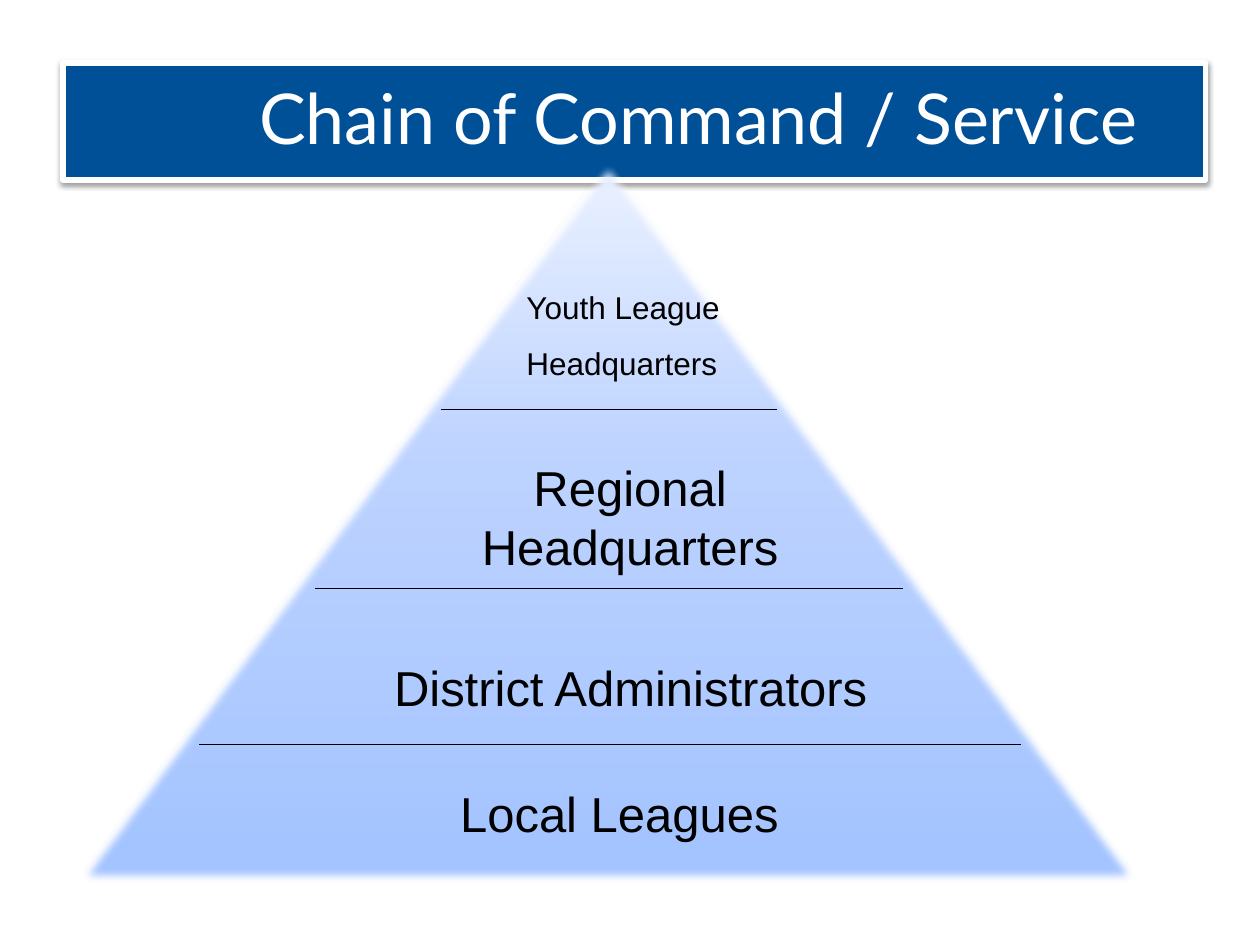
import dataclasses
import typing

import lxml.etree
import pptx
import pptx.dml.color
import pptx.enum.shapes
import pptx.enum.text
import pptx.oxml.ns
import pptx.util

Inches = pptx.util.Inches
Pt = pptx.util.Pt
RGB = pptx.dml.color.RGBColor.from_string
Shape = pptx.enum.shapes.MSO_SHAPE
Align = pptx.enum.text.PP_ALIGN
Anchor = pptx.enum.text.MSO_ANCHOR
qn = pptx.oxml.ns.qn


@dataclasses.dataclass(frozen=True)
class Theme:
    navy: str = "005097"
    white: str = "FFFFFF"
    black: str = "000000"
    fade: tuple = ((5, "A4C4FF"), (61, "BFD4FF"), (94, "E6EEFF"))
    head: str = "Lato"
    body: str = "Arial"
    title: int = 40
    large: int = 28
    small: int = 18
    gap: int = 10
    rule: float = 0.75


@dataclasses.dataclass(frozen=True)
class Label:
    box: tuple
    lines: tuple
    size: int
    font: str
    color: str
    align: typing.Any = Align.CENTER
    anchor: typing.Any = Anchor.TOP


class Rule(typing.NamedTuple):
    left: float
    right: float
    y: float


THEME = Theme()

RULES = (Rule(1.58, 8.1, 5.91), Rule(2.5, 7.17, 4.67), Rule(3.5, 6.17, 3.25))


def tier(box: tuple, text: str) -> Label:
    return Label(box, (text,), THEME.large, THEME.body, THEME.black)


TITLE = Label((1.58, 0.3, 7.92, 1.25), ("Chain of Command / Service",),
              THEME.title, THEME.head, THEME.white, anchor=Anchor.MIDDLE)
TIERS = (
    tier((2.08, 6.17, 5.67, 0.57), "Local Leagues"),
    tier((2.17, 5.17, 5.67, 0.57), "District Administrators"),
    tier((3.29, 3.58, 3.42, 1.03), "Regional Headquarters"),
    Label((4.08, 2.24, 2, 0.85), ("Youth League", "Headquarters"),
          THEME.small, THEME.body, THEME.black, Align.LEFT),
)


def node(root: typing.Any, tag: str, **attrs: typing.Any) -> typing.Any:
    return lxml.etree.SubElement(
        root, qn(tag), {key: str(val) for key, val in attrs.items()})


def add_shape(slide: typing.Any, kind: typing.Any, box: tuple,
              line: str, width: float) -> typing.Any:
    shape = slide.shapes.add_shape(kind, *map(Inches, box))
    shape.shadow.inherit = False
    shape.line.color.rgb = RGB(line)
    shape.line.width = Pt(width)
    return shape


def add_banner(slide: typing.Any) -> None:
    shape = add_shape(slide, Shape.RECTANGLE, (0.5, 0.5, 9.07, 0.93),
                      THEME.white, 3)
    shape.fill.solid()
    shape.fill.fore_color.rgb = RGB(THEME.navy)
    # Soft shadow straight below
    effect = shape.element.spPr.find(qn("a:effectLst"))
    shadow = node(effect, "a:outerShdw", blurRad=Pt(3.1), dist=Pt(1.6),
                  dir=90 * 60000, rotWithShape=0)
    color = node(shadow, "a:srgbClr", val=THEME.black)
    node(color, "a:alpha", val=38000)


def add_cone(slide: typing.Any) -> None:
    shape = add_shape(slide, Shape.FLOWCHART_EXTRACT, (0.58, 1.25, 8.5, 5.75),
                      THEME.black, THEME.rule)
    # Fade from the base up to the tip
    shape.fill.gradient()
    grad = shape.element.spPr.find(qn("a:gradFill"))
    stops = grad.find(qn("a:gsLst"))
    for stop in list(stops):
        stops.remove(stop)
    for place, color in THEME.fade:
        stop = node(stops, "a:gs", pos=place * 1000)
        node(stop, "a:srgbClr", val=color)
    grad.find(qn("a:lin")).set("ang", str(270 * 60000))
    # Blurred edge
    effect = shape.element.spPr.find(qn("a:effectLst"))
    node(effect, "a:softEdge", rad=Pt(5))


def add_rule(slide: typing.Any, rule: Rule) -> None:
    line = slide.shapes.add_connector(
        pptx.enum.shapes.MSO_CONNECTOR.STRAIGHT,
        Inches(rule.left), Inches(rule.y), Inches(rule.right), Inches(rule.y))
    line.line.color.rgb = RGB(THEME.black)
    line.line.width = Pt(THEME.rule)
    node(line.element.spPr, "a:effectLst")


def add_label(slide: typing.Any, label: Label) -> None:
    frame = slide.shapes.add_textbox(*map(Inches, label.box)).text_frame
    frame.word_wrap = True
    frame.vertical_anchor = label.anchor
    for i, text in enumerate(label.lines):
        para = frame.add_paragraph() if i else frame.paragraphs[0]
        para.alignment = label.align
        if i:
            para.space_before = Pt(THEME.gap)
        run = para.add_run()
        run.text = text
        run.font.name = label.font
        run.font.size = Pt(label.size)
        run.font.color.rgb = RGB(label.color)


def main() -> None:
    deck = pptx.Presentation()
    deck.slide_width, deck.slide_height = Inches(10), Inches(7.5)
    slide = deck.slides.add_slide(deck.slide_layouts[6])

    # Title band
    add_banner(slide)
    add_label(slide, TITLE)

    # Pyramid and its tiers
    add_cone(slide)
    for rule in RULES:
        add_rule(slide, rule)
    for label in TIERS:
        add_label(slide, label)

    deck.save("out.pptx")


if __name__ == "__main__":
    main()
